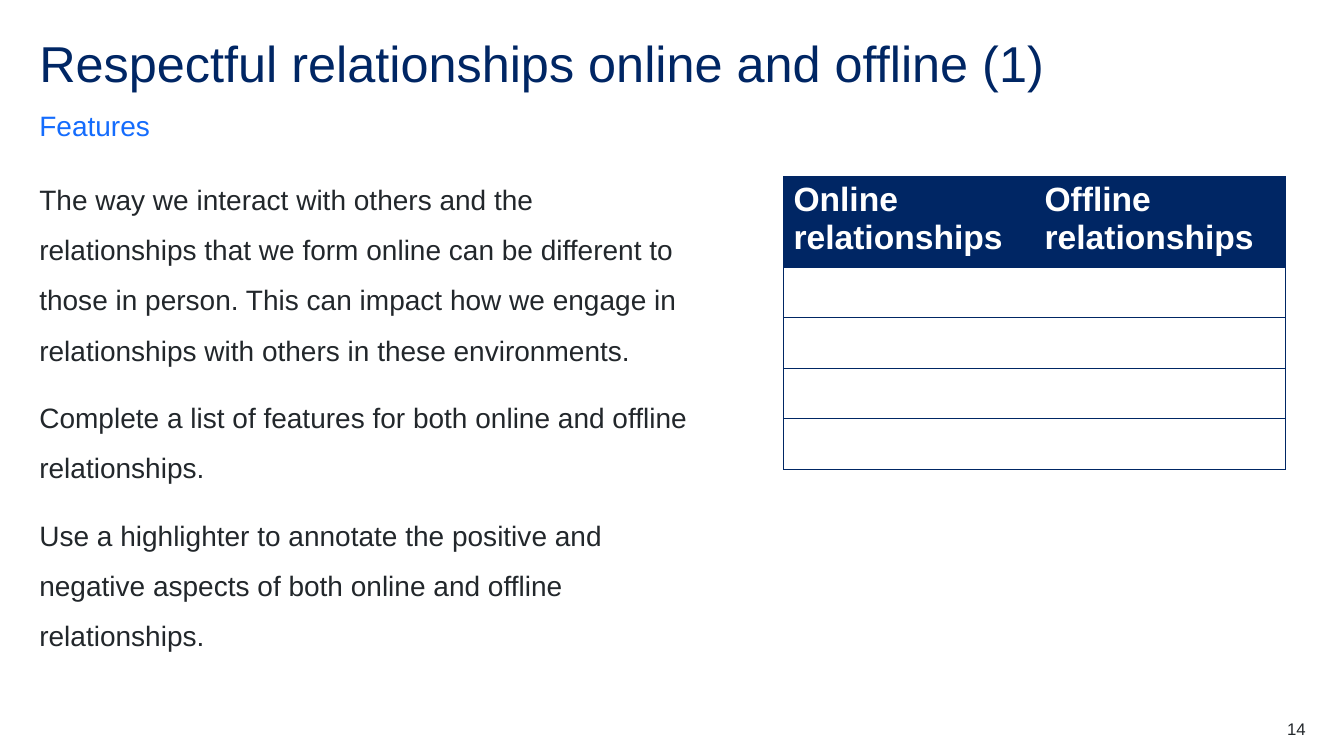
from lxml.etree import SubElement
from pptx import Presentation
from pptx.dml.color import RGBColor
from pptx.enum.text import MSO_ANCHOR as Anchor, PP_ALIGN as Align
from pptx.oxml.ns import qn
from pptx.util import Pt

PX = 9144  # EMU per px, 100 px to the inch
NAVY = RGBColor(0x00, 0x26, 0x64)
BLUE = RGBColor(0x14, 0x6C, 0xFD)
INK = RGBColor(0x22, 0x27, 0x2B)
WHITE = RGBColor(0xFF, 0xFF, 0xFF)
NO_STYLE = "{2D5ABB26-0587-4C30-8999-92F81FD0307C}"

LEFT, WIDTH = 39, 1256
BODY_SPACING = {"line_spacing": 1.5, "space_after": Pt(12)}
BODY = [
    "The way we interact with others and the relationships that we form online "
    "can be different to those in person. This can impact how we engage in "
    "relationships with others in these environments.",
    "Complete a list of features for both online and offline relationships.",
    "Use a highlighter to annotate the positive and negative aspects of both "
    "online and offline relationships.",
]
HEADINGS = ["Online relationships", "Offline relationships"]
EMPTY_ROWS = 4
HEADING_SIZE = Pt(24)


def emu(box):
    return [length * PX for length in box]


def add_run(paragraph, text, size, color, bold=False):
    run = paragraph.add_run()
    run.text = text
    run.font.name = "Arial"
    run.font.size = size
    run.font.bold = bold
    run.font.color.rgb = color


def add_text(slide, box, texts, size, color, anchor=Anchor.TOP, paragraph_format=None):
    frame = slide.shapes.add_textbox(*emu(box)).text_frame
    frame.word_wrap = True
    frame.vertical_anchor = anchor
    for side in ("left", "top", "right", "bottom"):
        setattr(frame, f"margin_{side}", 0)
    for index, text in enumerate(texts):
        paragraph = frame.add_paragraph() if index else frame.paragraphs[0]
        for name, value in (paragraph_format or {}).items():
            setattr(paragraph, name, value)
        add_run(paragraph, text, Pt(size), color)


def add_borders(cell, sides):
    properties = cell._tc.get_or_add_tcPr()
    for side in sides:
        line = SubElement(properties, qn(f"a:ln{side}"), w=str(Pt(0.5)))
        fill = SubElement(line, qn("a:solidFill"))
        SubElement(fill, qn("a:srgbClr"), val=str(NAVY))


def add_features_table(slide, box, heading_height, row_height):
    columns = len(HEADINGS)
    frame = slide.shapes.add_table(EMPTY_ROWS + 1, columns, *emu(box))
    table = frame.table
    table.horz_banding = False
    table._tbl.tblPr.find(qn("a:tableStyleId")).text = NO_STYLE
    for index, row in enumerate(table.rows):
        row.height = (row_height if index else heading_height) * PX
        for column, cell in enumerate(row.cells):
            outer = ("L" if column == 0 else "") + ("R" if column == columns - 1 else "")
            add_borders(cell, outer + "TB")
            paragraph = cell.text_frame.paragraphs[0]
            if index == 0:
                cell.fill.solid()
                cell.fill.fore_color.rgb = NAVY
                add_run(paragraph, HEADINGS[column], HEADING_SIZE, WHITE, bold=True)
            else:
                cell.fill.background()
                end = SubElement(paragraph._p, qn("a:endParaRPr"),
                                 sz=str(int(HEADING_SIZE.pt * 100)))
                SubElement(end, qn("a:latin"), typeface="Arial")


def add_heading(slide, box):
    left, top, width, height = box
    add_text(slide, (left, top, width, 60),
             ["Respectful relationships online and offline (1)"], 36, NAVY,
             paragraph_format={"line_spacing": 0.9})
    add_text(slide, (left, top + height - 34, width, 34), ["Features"], 20, BLUE,
             Anchor.BOTTOM, BODY_SPACING)


def main():
    presentation = Presentation()
    presentation.slide_width, presentation.slide_height = emu((1333, 750))
    slide = presentation.slides.add_slide(presentation.slide_layouts[6])
    add_heading(slide, (LEFT, 39, WIDTH, 102))
    add_text(slide, (LEFT, 164, 653, 527), BODY, 20, INK, paragraph_format=BODY_SPACING)
    add_features_table(slide, (777, 175, 498, 241), heading_height=73, row_height=42)
    add_text(slide, (LEFT + WIDTH - 79, 713, 79, 20), ["14"], 12, INK,
             paragraph_format={"alignment": Align.RIGHT})
    presentation.save("out.pptx")


if __name__ == "__main__":
    main()
